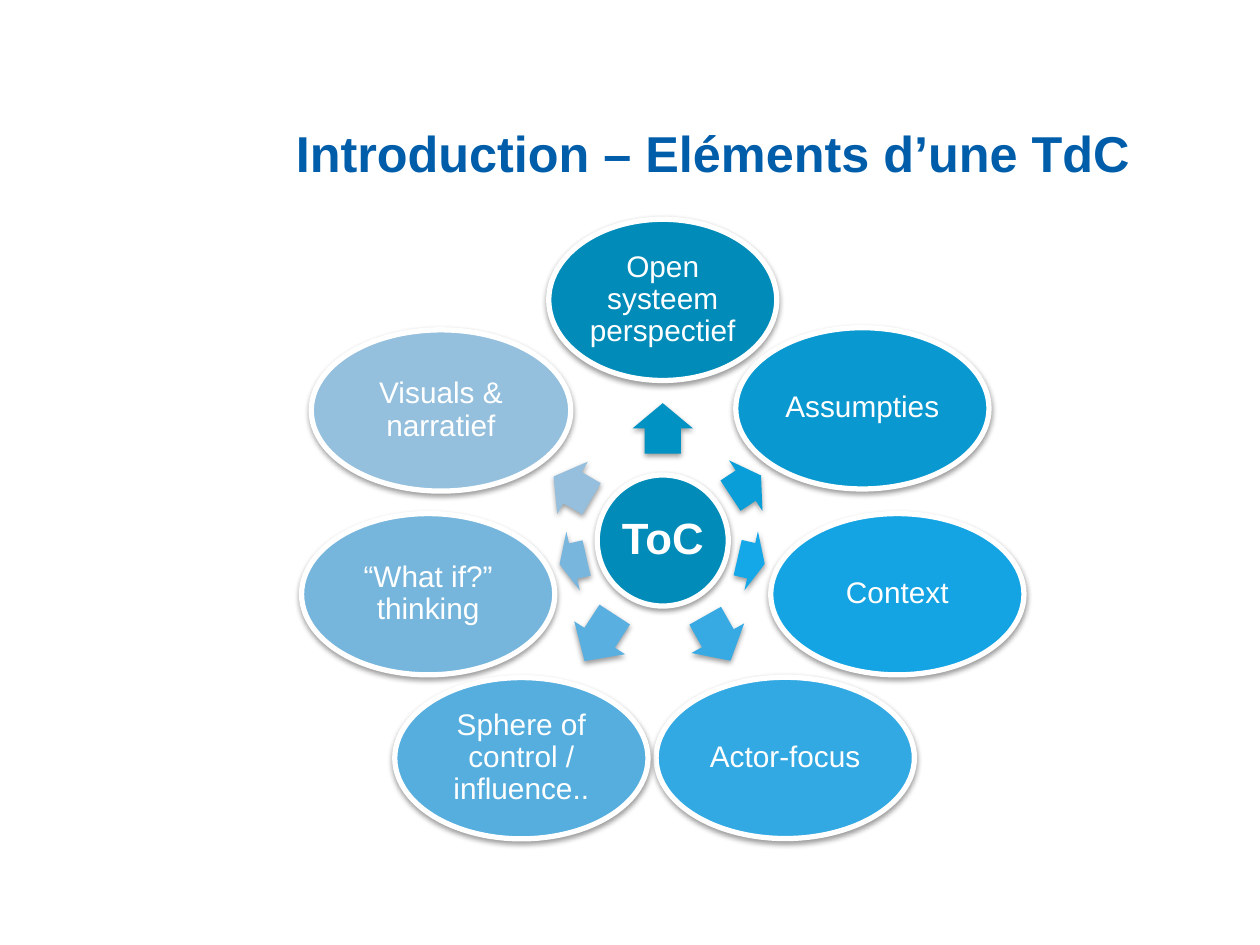
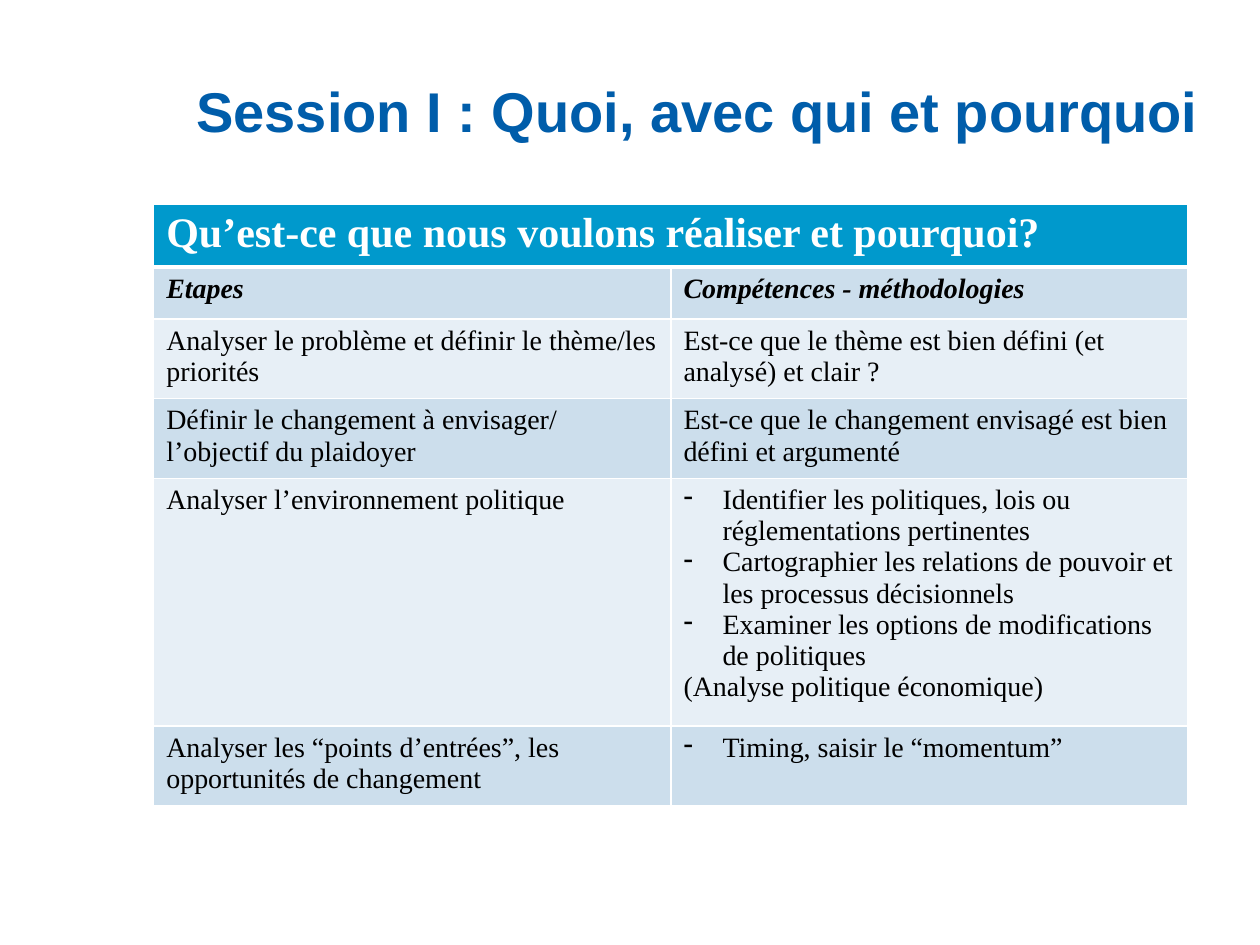
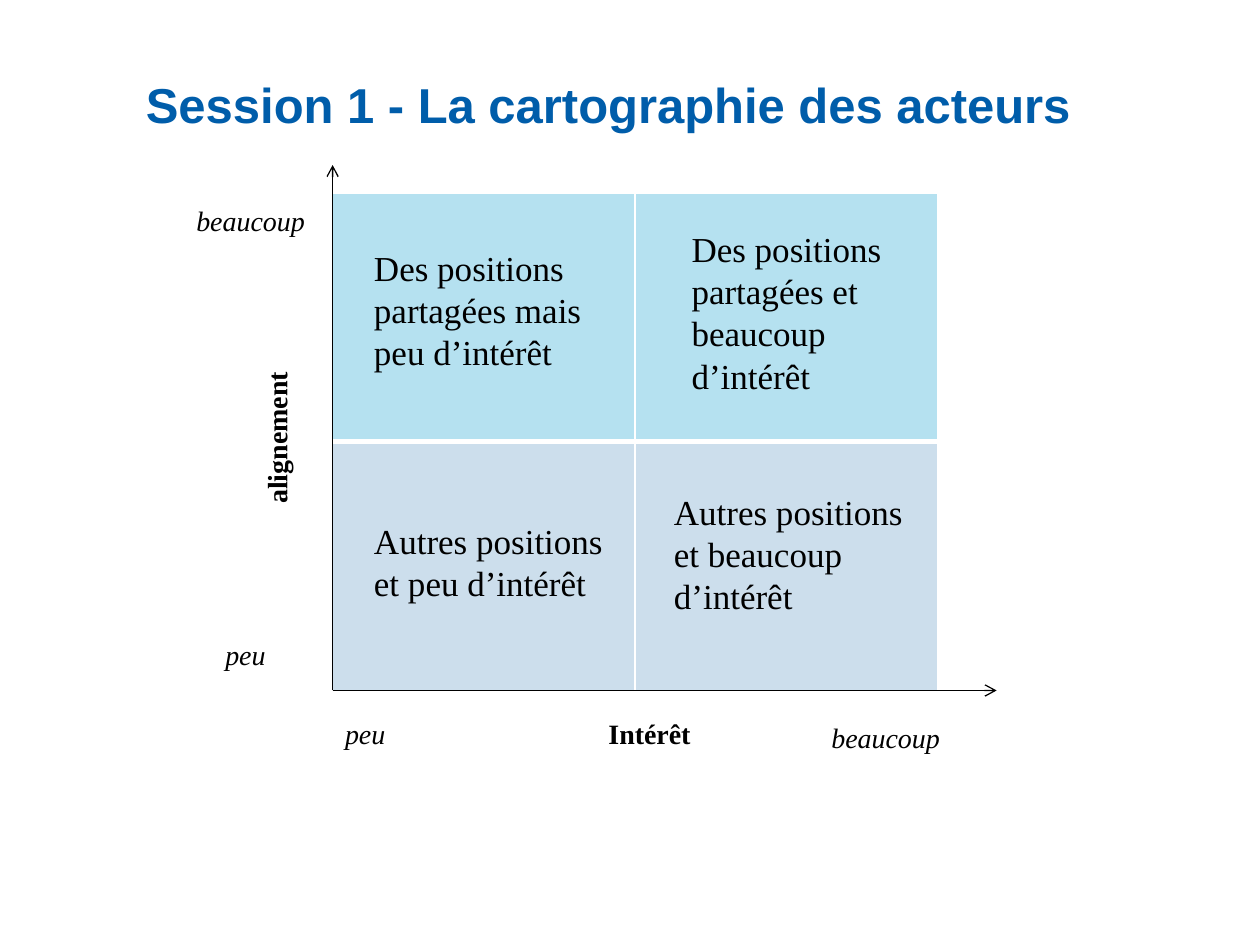
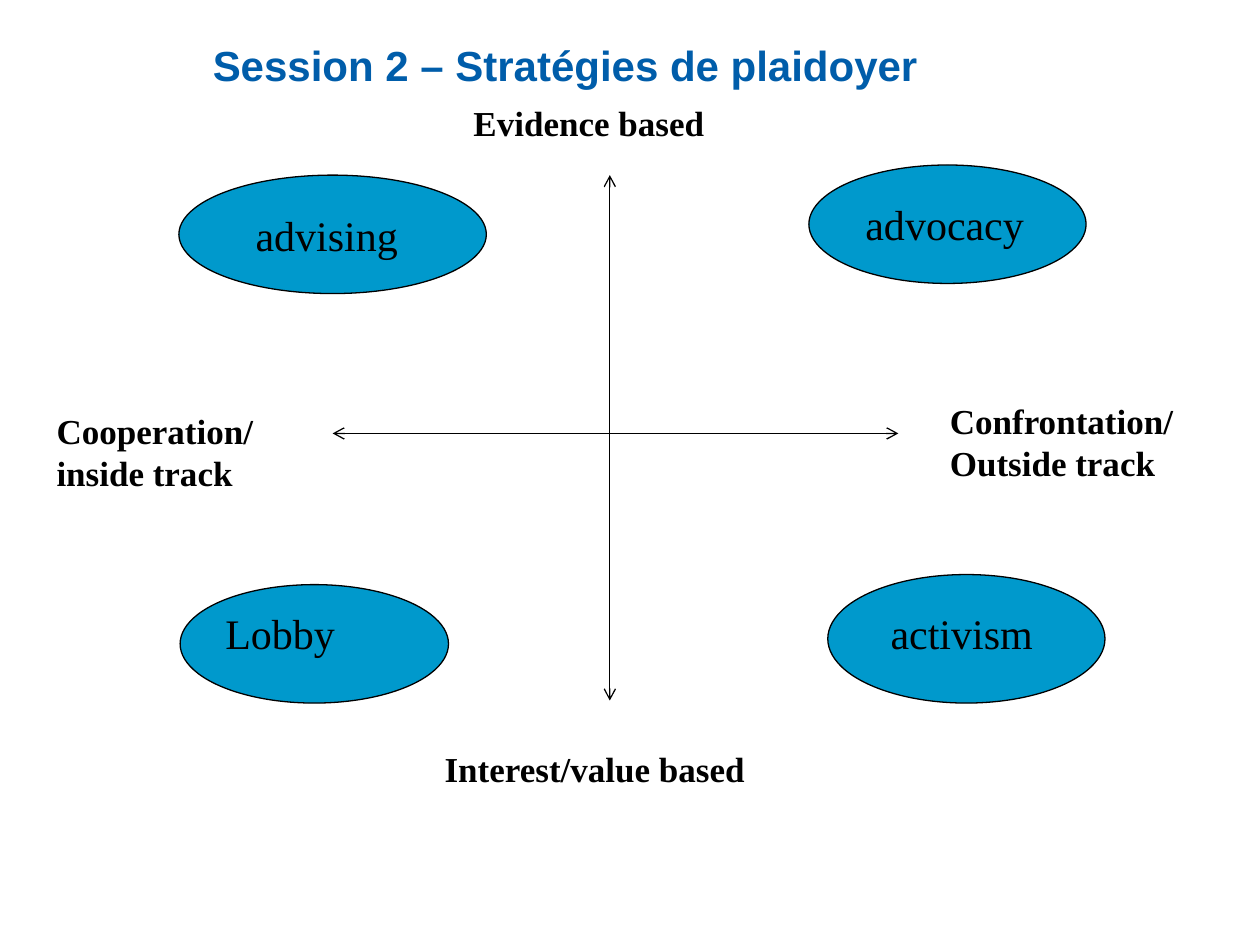
from math import cos, radians, sin

from lxml.etree import SubElement
from pptx import Presentation
from pptx.dml.color import RGBColor
from pptx.enum.shapes import MSO_CONNECTOR, MSO_SHAPE
from pptx.enum.text import MSO_ANCHOR, MSO_AUTO_SIZE, PP_ALIGN
from pptx.oxml.ns import qn
from pptx.util import Emu, Inches, Pt

COLS, ROWS = 10, 7.5
UNIT = Inches(1)
SANS, SERIF = "Arial", "Times New Roman"
TITLE, CYAN, BLACK, WHITE = "005DAA", "0099CC", "000000", "FFFFFF"
BAND_DARK, BAND_LIGHT = "CCDEEC", "E7EFF6"

BODY = {"name": SERIF, "size": 20, "color": BLACK}
AXIS = {**BODY, "bold": True}
SCALE = {**BODY, "size": 16, "italic": True}
SCALE_NAME = {**BODY, "size": 16, "bold": True}
STRATEGY = {**BODY, "size": 24}
CELL = {**BODY, "size": 16, "bold": False, "italic": False}
CELL_HEAD = {**CELL, "bold": True, "italic": True}
CELL_TITLE = {**CELL, "size": 24, "bold": True, "color": WHITE}
HUB = {"name": SANS, "size": 25, "bold": True, "color": WHITE}
SPOKE = {"name": SANS, "size": 17, "color": WHITE}


def rgb(color):
    return RGBColor.from_string(color)


def grid(*units):
    return [Emu(round(u * UNIT)) for u in units]


def style(font, fmt):
    for key, value in fmt.items():
        if key == "color":
            font.color.rgb = rgb(value)
        else:
            setattr(font, key, Pt(value) if key == "size" else value)


def write(tf, lines, fmt, align=None, spacing=None):
    for i, line in enumerate(lines):
        p = tf.paragraphs[0] if i == 0 else tf.add_paragraph()
        if line.startswith("- "):
            pPr = p._p.get_or_add_pPr()
            for key, indent in {"marL": 0.31, "indent": -0.31}.items():
                pPr.set(key, str(Inches(indent)))
            SubElement(pPr, qn("a:buChar"), char="-")
            line = line[2:]
        if align is not None:
            p.alignment = align
        if spacing:
            p.line_spacing = spacing
        r = p.add_run()
        r.text = line
        style(r.font, fmt)


def label(s, box, text, fmt, align=None, vert=None):
    tf = s.shapes.add_textbox(*grid(*box)).text_frame
    tf.word_wrap = True
    tf.auto_size = MSO_AUTO_SIZE.SHAPE_TO_FIT_TEXT
    if vert:
        tf._txBody.bodyPr.set("vert", vert)
    write(tf, text.split("\n"), fmt, align)


def add_slide(prs):
    return prs.slides.add_slide(prs.slide_layouts[6])


def title(s, text, x, y, w, size):
    tf = s.shapes.add_textbox(*grid(x, y, w, 0.75)).text_frame
    tf.word_wrap = True
    tf.vertical_anchor = MSO_ANCHOR.BOTTOM
    write(tf, [text], {"name": SANS, "size": size, "bold": True, "color": TITLE})


def preset(s, kind, box, fill, line=None, width=0.75, shadow=False):
    sp = s.shapes.add_shape(kind, *grid(*box))
    sp.shadow.inherit = False
    sp.fill.solid()
    sp.fill.fore_color.rgb = rgb(fill)
    if line:
        sp.line.color.rgb = rgb(line)
        sp.line.width = Pt(width)
    else:
        sp.line.fill.background()
    if shadow:
        effects = sp._element.spPr.find(qn("a:effectLst"))
        outer = SubElement(effects, qn("a:outerShdw"), blurRad=str(Pt(3.1)),
                           dist=str(Pt(1.6)), dir="5400000", rotWithShape="0")
        clr = SubElement(outer, qn("a:srgbClr"), val=BLACK)
        SubElement(clr, qn("a:alpha"), val="38000")
    return sp


def centred(cx, cy, w, h):
    return cx - w / 2, cy - h / 2, w, h


def bubble(s, cx, cy, w, h, text, fill, fmt, inset):
    sp = preset(s, MSO_SHAPE.OVAL, centred(cx, cy, w, h), fill, WHITE, 3, True)
    tf = sp.text_frame
    tf.word_wrap = True
    tf.vertical_anchor = MSO_ANCHOR.MIDDLE
    for side in ("left", "top", "right", "bottom"):
        setattr(tf, f"margin_{side}", Inches(inset))
    write(tf, [text], fmt, PP_ALIGN.CENTER, 0.9)


def arrow(s, start, end):
    c = s.shapes.add_connector(MSO_CONNECTOR.STRAIGHT, *grid(*start, *end))
    c.line.color.rgb = rgb(BLACK)
    c.line.width = Pt(0.75)
    SubElement(c.line._get_or_add_ln(), qn("a:tailEnd"), type="arrow")
    SubElement(c._element.spPr, qn("a:effectLst"))


def paint(cell, color, bottom=1, alpha=None):
    cell.fill.solid()
    cell.fill.fore_color.rgb = rgb(color)
    tcPr = cell._tc.get_or_add_tcPr()
    if alpha:
        clr = next(tcPr.iter(qn("a:srgbClr")))
        SubElement(clr, qn("a:alpha"), val=str(alpha * 1000))
    for i, (side, width) in enumerate(zip("LRTB", (1, 1, 1, bottom))):
        ln = SubElement(tcPr, qn(f"a:ln{side}"), w=str(Pt(width)))
        fill = SubElement(ln, qn("a:solidFill"))
        SubElement(fill, qn("a:srgbClr"), val=WHITE)
        tcPr.insert(i, ln)


def add_grid_table(s, x, y, w, heights, cols=2):
    shape = s.shapes.add_table(len(heights), cols, *grid(x, y, w, sum(heights)))
    for row, h in zip(shape.table.rows, heights):
        row.height = grid(h)[0]
    return shape.table


def elements_slide(prs):
    s = add_slide(prs)
    title(s, "Introduction – Eléments d’une TdC", 2.25, 0.75, 7.5, 28.8)
    cx, cy = 5.26, 4.29
    bubble(s, cx, cy, 1.04, 1.04, "ToC", "008BB9", HUB, 0.03)
    spokes = [
        ("Open systeem perspectief", 270, 1.91, 1.81, "008BB9", 0.89, 0.4, "0092C3"),
        ("Assumpties", 326.5, 1.9, 2.01, "0998CF", 0.79, 0.29, "099ED7"),
        ("Context", 12.9, 1.91, 2.01, "14A4E3", 0.72, 0.22, "15A8E9"),
        ("Actor-focus", 60.6, 1.98, 2.05, "33A9E3", 0.89, 0.41, "37AAE3"),
        ("Sphere of control / influence..", 123, 2.06, 2.01, "56AEDE", 0.92, 0.44, "59AFDF"),
        ("“What if?” thinking", 167.1, 1.91, 2.01, "77B6DC", 0.73, 0.22, "78B6DD"),
        ("Visuals & narratief", 210.4, 2.04, 2.06, "95C0DD", 0.83, 0.35, "95BFDD"),
    ]
    for text, angle, reach, w, fill, arrow_reach, length, arrow_fill in spokes:
        dx, dy = cos(radians(angle)), sin(radians(angle))
        box = centred(cx + arrow_reach * dx, cy + arrow_reach * dy, length, 0.48)
        sp = preset(s, MSO_SHAPE.RIGHT_ARROW, box, arrow_fill, shadow=True)
        sp.rotation = angle
        sp.adjustments[0], sp.adjustments[1] = 0.6, 0.5
        bubble(s, cx + reach * dx, cy + reach * dy, w, 1.28, text, fill, SPOKE, 0.02)


def steps_slide(prs):
    s = add_slide(prs)
    title(s, "Session I : Quoi, avec qui et pourquoi", 1.46, 0.44, 8.29, 32)
    rows = [
        (0.46, ["Qu’est-ce que nous voulons réaliser et pourquoi?"], []),
        (0.41, ["Etapes"], ["Compétences - méthodologies"]),
        (0.59, ["Analyser le problème et définir le thème/les priorités"],
         ["Est-ce que le thème est bien défini (et analysé) et clair ?"]),
        (0.59, ["Définir le changement à envisager/ l’objectif du plaidoyer"],
         ["Est-ce que le changement envisagé est bien défini et argumenté"]),
        (1.83, ["Analyser l’environnement politique"],
         ["- Identifier les politiques, lois ou réglementations pertinentes",
          "- Cartographier les relations de pouvoir et les processus décisionnels",
          "- Examiner les options de modifications de politiques",
          "(Analyse politique économique)"]),
        (0.59, ["Analyser les “points d’entrées”, les opportunités de changement"],
         ["- Timing, saisir le “momentum”"]),
    ]
    tbl = add_grid_table(s, 1.22, 1.62, 8.21, [row[0] for row in rows])
    tbl.cell(0, 0).merge(tbl.cell(0, 1))
    for i, (_, *texts) in enumerate(rows):
        fill = CYAN if i == 0 else BAND_DARK if i % 2 else BAND_LIGHT
        fmt = {0: CELL_TITLE, 1: CELL_HEAD}.get(i, CELL)
        for j, lines in enumerate(texts):
            cell = tbl.cell(i, j)
            paint(cell, fill, bottom=3 if i == 0 else 1)
            write(cell.text_frame, lines, fmt)


def actors_slide(prs):
    s = add_slide(prs)
    x, y, w, h = 2.64, 1.53, 4.8, 3.95
    tbl = add_grid_table(s, x, y, w, [h / 2] * 2)
    for j in range(2):
        paint(tbl.cell(0, j), CYAN, bottom=3, alpha=29)
        paint(tbl.cell(1, j), BAND_DARK)
    origin = x, y + h
    arrow(s, origin, (x, 1.31))
    arrow(s, origin, (7.91, y + h))
    for text, left, top, width in [
        ("beaucoup", 6.5, 5.67, 1.1), ("peu", x, 5.64, 0.87),
        ("peu", 1.69, 5.01, 0.87), ("beaucoup", 1.46, 1.57, 1.1),
    ]:
        label(s, (left, top, width, 0.37), text, SCALE)
    label(s, (2.01, 2.02, 0.47, 2.91), "alignement", SCALE_NAME, PP_ALIGN.CENTER, "vert270")
    label(s, (3.58, 5.64, 3.15, 0.37), "Intérêt", SCALE_NAME, PP_ALIGN.CENTER)
    for text, left, top, height in [
        ("Des positions partagées mais peu d’intérêt", 2.87, 1.91, 1.11),
        ("Autres positions et peu d’intérêt", 2.87, 4.07, 0.77),
        ("Des positions partagées et beaucoup d’intérêt", 5.39, 1.76, 1.45),
        ("Autres positions et beaucoup d’intérêt", 5.25, 3.84, 1.11),
    ]:
        label(s, (left, top, 2.2, height), text, BODY)
    title(s, "Session 1 - La cartographie des acteurs", 1.06, 0.36, 8.13, 28)


def strategies_slide(prs):
    s = add_slide(prs)
    cx, cy = 4.84, 3.44
    for end in [(cx, 5.56), (cx, 1.39), (7.13, cy), (2.64, cy)]:
        arrow(s, (cx, cy), end)
    for text, box in [
        ("Evidence based", (3.66, 0.76, 2.6, 0.44)),
        ("Interest/value based", (3.43, 5.88, 3.39, 0.44)),
        ("Confrontation/\nOutside track", (7.44, 3.12, 2.36, 1.18)),
        ("Cooperation/ inside track", (0.35, 3.2, 2.05, 0.77)),
    ]:
        label(s, box, text, AXIS)
    for text, oval, (left, top, width) in [
        ("advocacy", (6.42, 1.31, 2.2, 0.94), (6.77, 1.53, 1.5)),
        ("advising", (1.42, 1.39, 2.44, 0.94), (1.93, 1.61, 1.5)),
        ("activism", (6.57, 4.56, 2.2, 1.02), (6.97, 4.77, 1.5)),
        ("Lobby", (1.43, 4.64, 2.13, 0.94), (1.69, 4.77, 1.57)),
    ]:
        preset(s, MSO_SHAPE.OVAL, oval, CYAN, BLACK)
        label(s, (left, top, width, 0.5), text, STRATEGY)
    title(s, "Session 2 – Stratégies de plaidoyer", 1.59, 0.01, 8.21, 24)


def main():
    prs = Presentation()
    prs.slide_width, prs.slide_height = grid(COLS, ROWS)
    for build in (elements_slide, steps_slide, actors_slide, strategies_slide):
        build(prs)
    prs.save("out.pptx")


if __name__ == "__main__":
    main()
